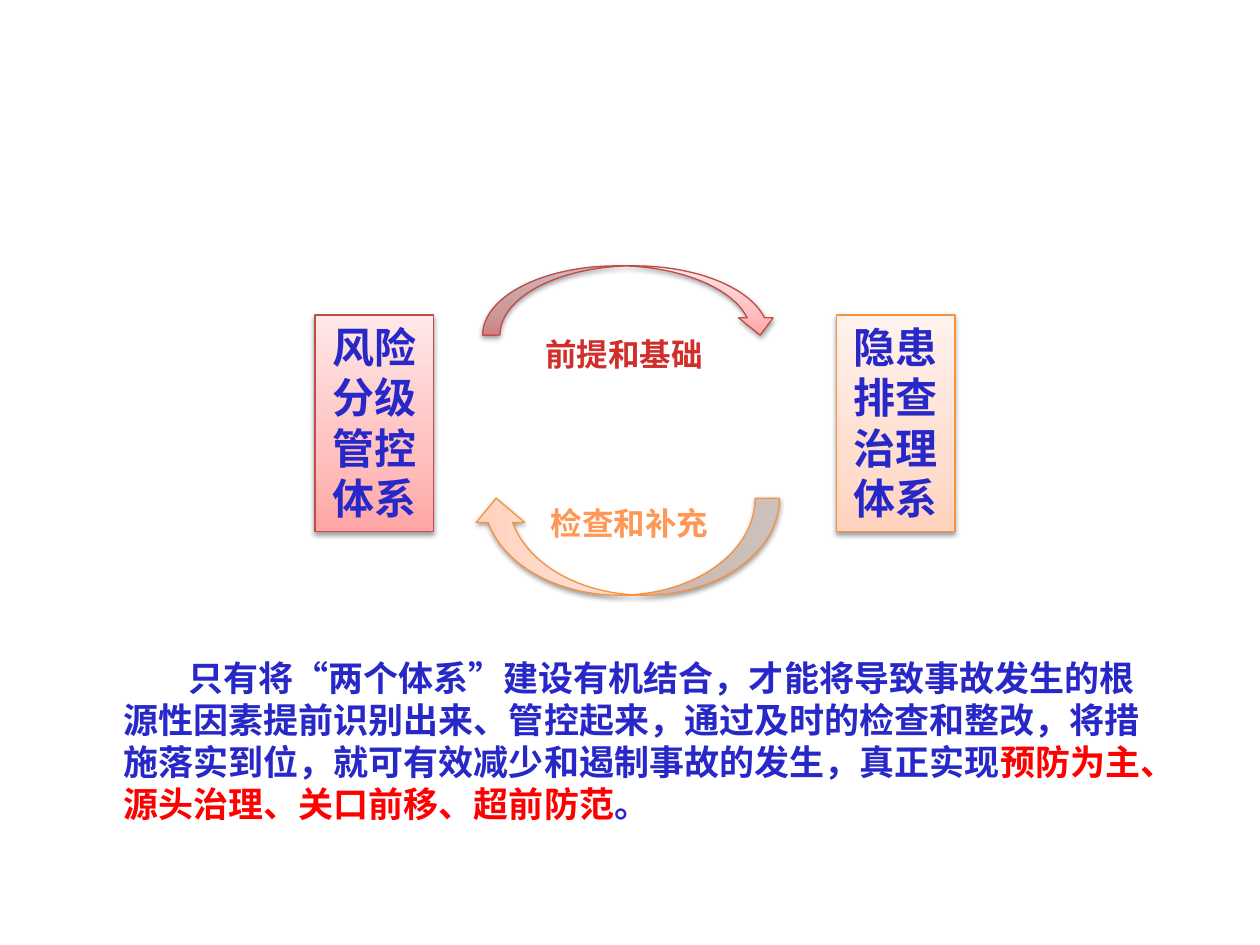
import pptx
import pptx.util
import pptx.dml.color
import pptx.enum.shapes
import pptx.enum.text
import pptx.oxml
import pptx.oxml.ns

Pt = pptx.util.Pt
SHAPE = pptx.enum.shapes.MSO_SHAPE
ALIGN = pptx.enum.text.PP_ALIGN

COLORS = {
    "blue": "2828C8", "emphasis": "FF0000", "shadow": "000000",
    "red_line": "BF4C48", "red_text": "D02F2C",
    "orange_line": "F69240", "orange_text": "FF9856",
    "red_0": "FFA6A5", "red_35": "FFC0BF", "red_100": "FFE7E7",
    "orange_0": "FFD2BD", "orange_35": "FFDED0", "orange_100": "FFF2ED",
}
STOPS = (0, 35, 100)

# text, theme, left
SYSTEMS = [("风险分级管控体系", "red", 180), ("隐患排查治理体系", "orange", 478)]
SYSTEM_TOP, SYSTEM_W, SYSTEM_H = 180, 67.7, 123.8

# preset, theme, (left, top, width, height), rotation
ARROWS = [
    (SHAPE.CURVED_DOWN_ARROW, "red", (275.8, 151.9, 168.5, 39.6), 0),
    (SHAPE.CURVED_LEFT_ARROW, "orange", (329.8, 224.6, 55.4, 175.7), 90),
]

# text, theme, (left, top, width, height), alignment
LABELS = [
    ("前提和基础", "red", (304.6, 187.9, 114.5, 29), ALIGN.LEFT),
    ("检查和补充", "orange", (292.3, 284.4, 134.6, 29), ALIGN.CENTER),
]

SUMMARY_BOX = (63.4, 371.5, 596.2, 104.4)
SUMMARY_INDENT = 37
SUMMARY = [
    ("只有将“两个体系”建设有机结合，才能将导致事故发生的根源性因素提前识别出来、管控起来，"
     "通过及时的检查和整改，将措施落实到位，就可有效减少和遏制事故的发生，真正实现", "blue"),
    ("预防为主、源头治理、关口前移、超前防范", "emphasis"),
    ("。", "blue"),
]


def rgb(name):
    return pptx.dml.color.RGBColor.from_string(COLORS[name])


def add_xml(parent, xml):
    ns = pptx.oxml.ns.nsdecls("a")
    parent.append(pptx.oxml.parse_xml(xml.replace(" ", f" {ns} ", 1)))


def style_font(r, size, color, name="Calibri"):
    r.font.size, r.font.bold, r.font.name = Pt(size), True, name
    r.font.color.rgb = rgb(color)


def add_themed_shape(s, preset, theme, box):
    """Add a shape with a three-stop vertical gradient and a soft shadow below."""
    sp = s.shapes.add_shape(preset, *map(Pt, box))
    sp.fill.gradient()
    sp.fill.gradient_angle = 90
    stops = sp._element.spPr.find(".//" + pptx.oxml.ns.qn("a:gsLst"))
    for stop in list(stops):
        stops.remove(stop)
    for pos in STOPS:
        color = COLORS[f"{theme}_{pos}"]
        add_xml(stops, f'<a:gs pos="{pos * 1000}"><a:srgbClr val="{color}"/></a:gs>')
    sp.line.color.rgb = rgb(f"{theme}_line")
    sp.line.width = Pt(0.75)
    sp.shadow.inherit = False
    effects = sp._element.spPr.find(pptx.oxml.ns.qn("a:effectLst"))
    add_xml(effects, f'<a:outerShdw blurRad="{Pt(3.1)}" dist="{Pt(1.6)}" dir="5400000" '
                     f'rotWithShape="0"><a:srgbClr val="{COLORS["shadow"]}">'
                     '<a:alpha val="38000"/></a:srgbClr></a:outerShdw>')
    return sp


def add_text_box(s, box):
    tf = s.shapes.add_textbox(*map(Pt, box)).text_frame
    tf.word_wrap = True
    return tf


def main():
    prs = pptx.Presentation()
    prs.slide_width, prs.slide_height = Pt(720), Pt(540)
    s = prs.slides.add_slide(prs.slide_layouts[6])

    for text, theme, left in SYSTEMS:
        sp = add_themed_shape(s, SHAPE.RECTANGLE, theme,
                              (left, SYSTEM_TOP, SYSTEM_W, SYSTEM_H))
        tf = sp.text_frame
        tf.word_wrap = True
        tf.vertical_anchor = pptx.enum.text.MSO_ANCHOR.TOP
        tf.text = text
        p = tf.paragraphs[0]
        p.alignment = ALIGN.CENTER
        style_font(p.runs[0], 24, "blue")

    for preset, theme, box, rotation in ARROWS:
        add_themed_shape(s, preset, theme, box).rotation = rotation

    for text, theme, box, alignment in LABELS:
        p = add_text_box(s, box).paragraphs[0]
        p.text = text
        p.alignment = alignment
        style_font(p.runs[0], 18, f"{theme}_text", "Arial")

    p = add_text_box(s, SUMMARY_BOX).paragraphs[0]
    p._p.get_or_add_pPr().set("indent", str(Pt(SUMMARY_INDENT)))
    for text, color in SUMMARY:
        r = p.add_run()
        r.text = text
        style_font(r, 20, color)

    prs.save("out.pptx")


if __name__ == "__main__":
    main()
